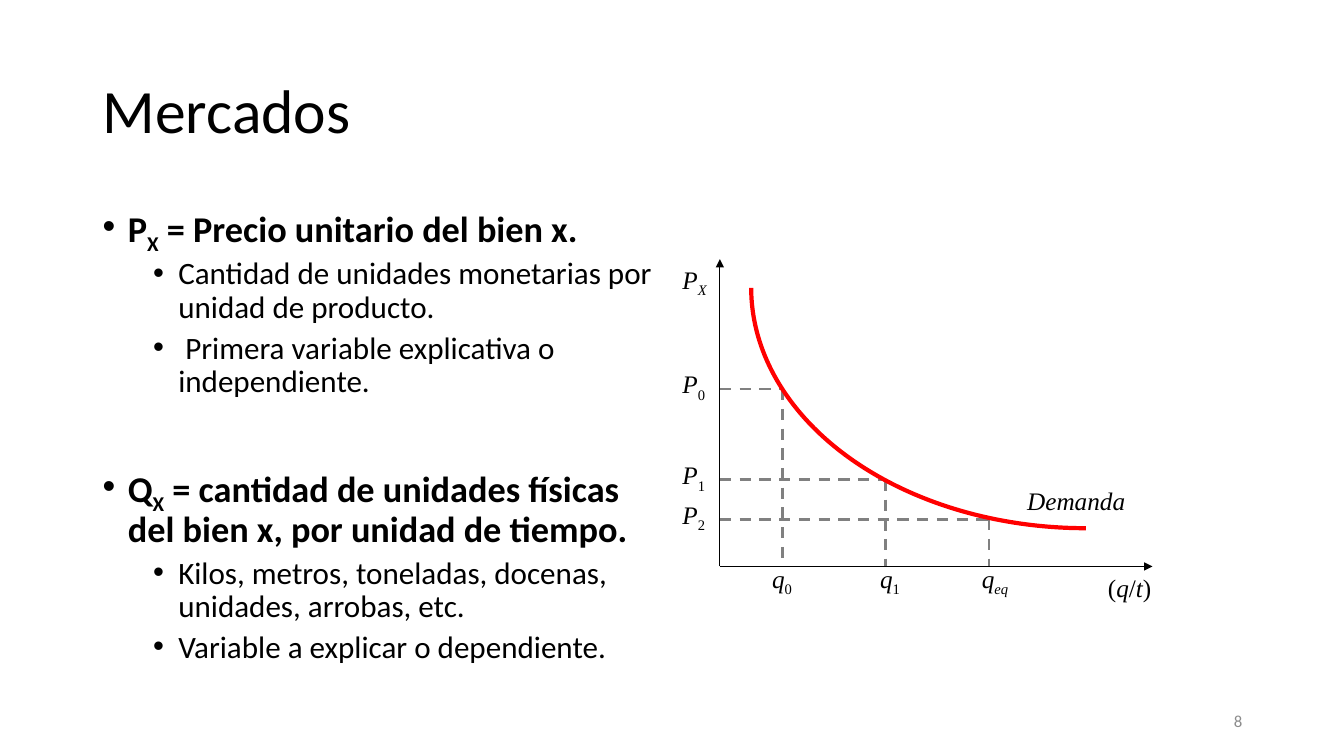
from dataclasses import dataclass
from typing import Any, NamedTuple

from lxml import etree
from pptx import Presentation, util as u
from pptx.dml.color import RGBColor
from pptx.enum import dml, shapes, text
from pptx.oxml.ns import qn

CELL = u.Inches(0.1)  # one column or row of the layout grid
COLORS = {"ink": "000000", "guide": "808080", "demand": "FF0000", "number": "8C8C8C"}
BODY_FONT, CHART_FONT = "Calibri", "Times New Roman"
AXIS_COL, AXIS_ROW = 71.4, 56.2


class Area(NamedTuple):
    col: float
    row: float
    cols: float
    rows: float


class Piece(NamedTuple):
    """A stretch of text with its own style."""
    words: str
    italic: bool = False
    sub: bool = False


@dataclass
class Bullet:
    pieces: list[Piece]
    sub_item: bool = False
    before: float = 10


class Point(NamedTuple):
    """A price and quantity pair on the demand curve."""
    col: float
    row: float
    price_mark: str


def cells(*counts: float) -> list[int]:
    return [round(count * CELL) for count in counts]


def rgb(name: str) -> RGBColor:
    return RGBColor.from_string(COLORS[name])


def apply(target: Any, formats: dict[str, Any]) -> None:
    for key, value in formats.items():
        setattr(target, key, value)


def add_frame(slide, area: Area, anchor=text.MSO_ANCHOR.TOP):
    frame = slide.shapes.add_textbox(*cells(*area)).text_frame
    apply(frame, {"word_wrap": True, "vertical_anchor": anchor})
    return frame


def write(paragraph, pieces: list[Piece], font: str, size: float,
          bold: bool = False, color: str = "ink") -> None:
    for piece in pieces:
        run = paragraph.add_run()
        run.text = piece.words
        apply(run.font, {"name": font, "size": u.Pt(size), "bold": bold, "italic": piece.italic})
        run.font.color.rgb = rgb(color)
        if piece.sub:
            run.font._element.set("baseline", "-25000")


def add_bullets(slide, area: Area, bullets: list[Bullet]) -> None:
    frame = add_frame(slide, area)
    for index, bullet in enumerate(bullets):
        paragraph = frame.add_paragraph() if index else frame.paragraphs[0]
        props = paragraph._p.get_or_add_pPr()
        props.set("marL", str(u.Inches(0.75 if bullet.sub_item else 0.25)))
        props.set("indent", str(-u.Inches(0.25)))
        etree.SubElement(props, qn("a:buFont")).set("typeface", "Arial")
        etree.SubElement(props, qn("a:buChar")).set("char", "•")
        apply(paragraph, {"level": int(bullet.sub_item), "line_spacing": 0.9,
                          "space_before": u.Pt(bullet.before)})
        write(paragraph, bullet.pieces, BODY_FONT,
              22.2 if bullet.sub_item else 25.9, bold=not bullet.sub_item)


def add_label(slide, area: Area, pieces: list[Piece], tabs: tuple[float, ...] = ()) -> None:
    """Write a chart label, with tab stops counted in columns."""
    paragraph = add_frame(slide, area).paragraphs[0]
    if tabs:
        stops = etree.SubElement(paragraph._p.get_or_add_pPr(), qn("a:tabLst"))
        for stop in cells(*tabs):
            etree.SubElement(stops, qn("a:tab"), pos=str(stop), algn="l")
    paragraph.alignment = text.PP_ALIGN.JUSTIFY
    write(paragraph, pieces, CHART_FONT, 18)


def add_line(slide, start: tuple[float, float], end: tuple[float, float],
             color: str, width: float, dashed: bool = False, arrow: bool = False) -> None:
    connector = slide.shapes.add_connector(
        shapes.MSO_CONNECTOR.STRAIGHT, *cells(*start, *end))
    connector.line.color.rgb = rgb(color)
    connector.line.width = u.Pt(width)
    if dashed:
        connector.line.dash_style = dml.MSO_LINE.DASH
    props = connector._element.spPr
    if arrow:
        etree.SubElement(props.find(qn("a:ln")), qn("a:tailEnd")).set("type", "triangle")
    etree.SubElement(props, qn("a:effectLst"))


def add_demand_curve(slide, area: Area) -> None:
    curve = slide.shapes.add_shape(shapes.MSO_SHAPE.ARC, *cells(*area))
    curve.rotation = 180
    curve.shadow.inherit = False
    curve.fill.background()
    curve.line.color.rgb = rgb("demand")
    curve.line.width = u.Pt(3)


def add_demand_chart(slide) -> None:
    points = [Point(77.6, 38.6, "0"), Point(87.8, 47.6, "1"), Point(98.1, 51.5, "2")]
    for point in points:
        for start, end in (((AXIS_COL, point.row), (point.col, point.row)),
                           ((point.col, point.row), (point.col, AXIS_ROW))):
            add_line(slide, start, end, "guide", 2, dashed=True)
        add_label(slide, Area(66.7, point.row - 2.5, 4.7, 4),
                  [Piece("P", italic=True), Piece(point.price_mark, sub=True)])

    for axis_end in ((AXIS_COL, 25.7), (114.3, AXIS_ROW)):
        add_line(slide, (AXIS_COL, AXIS_ROW), axis_end, "ink", 0.75, arrow=True)

    add_label(slide, Area(66.7, 25.7, 4.7, 4), [Piece("P", True), Piece("X", True, True)])
    add_label(slide, Area(100.9, 47.7, 13.4, 4), [Piece("Demanda", True)])
    add_label(slide, Area(108.9, 56.3, 7, 4),
              [Piece("("), Piece("q", True), Piece("/"), Piece("t", True), Piece(")")])
    add_label(slide, Area(75.6, 55.4, 27, 4),
              [Piece("q", True), Piece("0", sub=True), Piece("\tq", True),
               Piece("1", sub=True), Piece("\tq", True), Piece("eq", True, True)],
              tabs=(10.7, 20.8))
    add_demand_curve(slide, Area(74.5, 4.7, 66.4, 47.7))


def main() -> None:
    deck = Presentation()
    apply(deck, {"slide_width": u.Inches(13.33), "slide_height": u.Inches(7.5)})
    slide = deck.slides.add_slide(deck.slide_layouts[6])

    title = add_frame(slide, Area(9.2, 4, 115, 14.5), text.MSO_ANCHOR.MIDDLE).paragraphs[0]
    title.line_spacing = 0.9
    write(title, [Piece("Mercados")], BODY_FONT, 44)

    add_bullets(slide, Area(9.2, 20, 56.7, 47.6), [
        Bullet([Piece("P"), Piece("X", sub=True),
                Piece(" = Precio unitario del bien x.")], before=0),
        Bullet([Piece("Cantidad de unidades monetarias por unidad de producto.")], True, 5),
        Bullet([Piece(" Primera variable explicativa o independiente.")], True, 5),
        Bullet([Piece("Q"), Piece("X", sub=True),
                Piece(" = cantidad de unidades físicas del bien x, por unidad de tiempo.")],
               before=48),
        Bullet([Piece("Kilos, metros, toneladas, docenas, unidades, arrobas, etc.")], True, 5),
        Bullet([Piece("Variable a explicar o dependiente.")], True, 5),
    ])

    number = add_frame(slide, Area(94.2, 69.5, 30, 4), text.MSO_ANCHOR.MIDDLE).paragraphs[0]
    number.alignment = text.PP_ALIGN.RIGHT
    write(number, [Piece("8")], BODY_FONT, 12, color="number")

    add_demand_chart(slide)
    deck.save("out.pptx")


if __name__ == "__main__":
    main()
